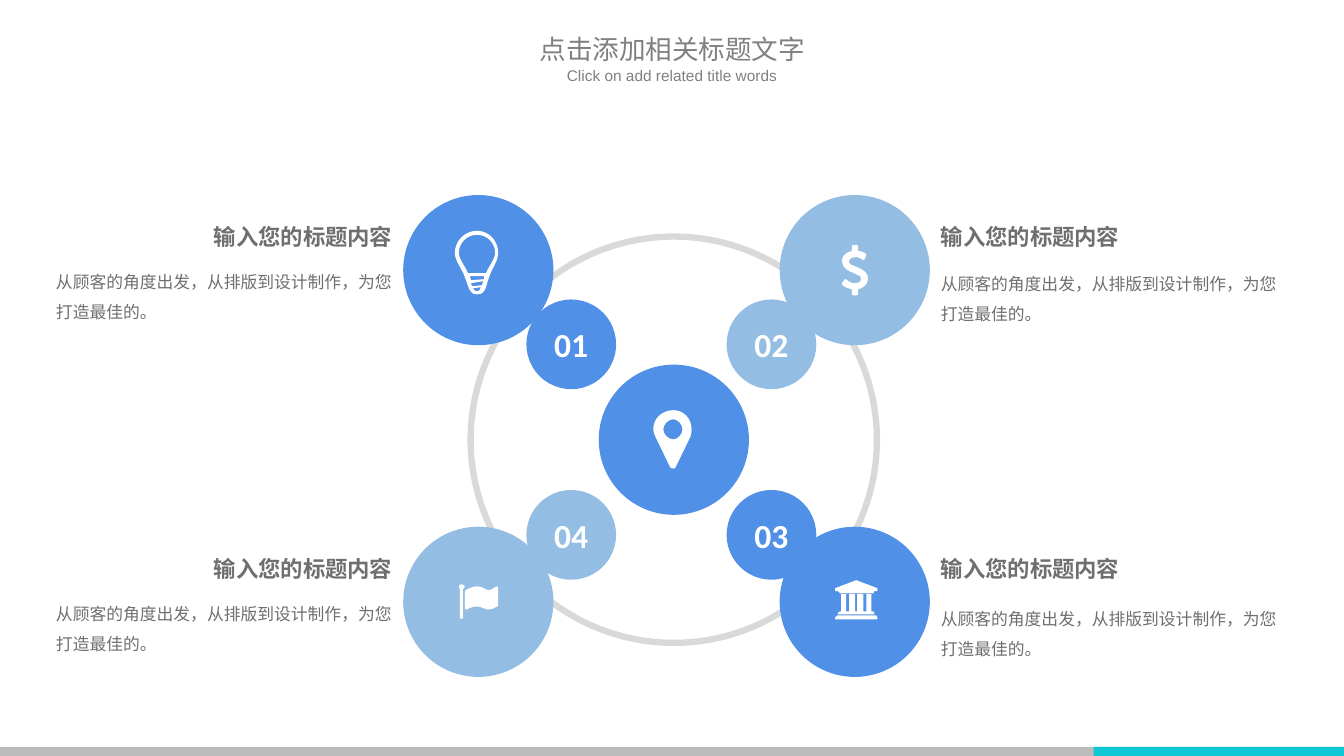
from lxml import etree
from pptx import Presentation
from pptx.dml.color import RGBColor
from pptx.enum.shapes import MSO_SHAPE as SHAPE
from pptx.enum.text import MSO_ANCHOR as ANCHOR, MSO_AUTO_SIZE as AUTO, PP_ALIGN as ALIGN
from pptx.oxml.ns import qn
from pptx.util import Pt

BLUE = RGBColor(0x51, 0x90, 0xE7)
PALE = RGBColor(0x94, 0xBD, 0xE3)
WHITE = RGBColor(0xFF, 0xFF, 0xFF)
RING = RGBColor(0xD9, 0xD9, 0xD9)
TEXT = RGBColor(0x6F, 0x6F, 0x6F)
TITLE = RGBColor(0x80, 0x80, 0x80)
BAR = RGBColor(0xBC, 0xBC, 0xBC)
TEAL = RGBColor(0x0F, 0xC7, 0xD3)
CJK = "Noto Sans CJK SC"
BIG, SMALL = 107.3, 64.1

HEADING = "输入您的标题内容"
BODY = "从顾客的角度出发，从排版到设计制作，为您打造最佳的。"

BULB = [
    [(22, 0), (10, 0, 0, 10, 0, 22), (0, 30, 8, 39, 10, 46), (14, 56, 14, 63, 22, 63),
     (31, 63, 30, 57, 34, 46), (36, 39, 43, 30, 43, 22), (43, 10, 34, 0, 22, 0)],
    [(31, 42), (13, 42), (12, 40, 11, 37, 10, 36), (7, 31, 4, 26, 4, 22),
     (4, 12, 12, 4, 22, 4), (32, 4, 40, 12, 40, 22), (40, 26, 37, 31, 34, 36),
     (33, 37, 32, 40, 31, 42)],
    [(16, 49), (15, 45), (29, 45), (29, 48)],
    [(17, 55), (16, 52), (28, 50), (27, 54)],
    [(22, 60), (20, 60, 19, 59, 18, 57), (26, 56), (25, 59, 24, 60, 22, 60)],
]
DOLLAR = [
    [(16, 44), (16, 49), (15, 50), (11, 50), (10, 49), (10, 44), (3, 43, 0, 39, 0, 39),
     (0, 38), (3, 34), (4, 34), (4, 34, 8, 38, 13, 38), (16, 38, 19, 37, 19, 33),
     (19, 30, 15, 30, 12, 28), (7, 26, 0, 23, 0, 16), (0, 11, 4, 7, 10, 6), (10, 1),
     (11, 0), (15, 0), (16, 1), (16, 6), (21, 6, 24, 9, 24, 9), (24, 11), (22, 15),
     (21, 15), (21, 15, 17, 12, 14, 12), (10, 12, 7, 14, 7, 16), (7, 20, 11, 20, 15, 22),
     (20, 24, 26, 27, 26, 33), (26, 39, 21, 43, 16, 44)],
]
BANK = [
    [(42, 8), (42, 11), (39, 11), (38, 13), (5, 13), (3, 11), (0, 11), (0, 8), (21, 0)],
    [(42, 37), (42, 39), (0, 39), (0, 37), (2, 35), (41, 35)],
    [(11, 14), (11, 31), (14, 31), (14, 14), (20, 14), (20, 31), (22, 31), (22, 14),
     (28, 14), (28, 31), (31, 31), (31, 14), (36, 14), (36, 31), (38, 31), (39, 32),
     (39, 34), (3, 34), (3, 32), (5, 31), (6, 31), (6, 14)],
]
FLAG = [
    [(4, 5), (4, 34), (1, 34), (1, 5), (0, 4, 0, 3, 0, 2), (0, 1, 1, 0, 3, 0),
     (4, 0, 6, 1, 6, 2), (6, 3, 5, 4, 4, 5)],
    [(39, 21), (39, 22, 39, 22, 38, 22), (35, 24, 32, 25, 29, 25), (26, 25, 23, 22, 18, 22),
     (15, 22, 11, 23, 8, 25), (6, 25, 6, 25, 6, 24), (6, 7), (8, 5), (11, 4, 14, 2, 18, 2),
     (21, 2, 24, 3, 27, 5), (28, 5, 29, 6, 29, 6), (33, 6, 36, 2, 38, 2),
     (39, 2, 39, 3, 39, 4)],
]
PIN = [
    [(37, 26), (23, 55), (22, 57, 22, 58, 20, 58), (18, 58, 16, 57, 16, 55), (2, 26),
     (1, 24, 0, 21, 0, 19), (0, 8, 9, 0, 20, 0), (30, 0, 38, 8, 38, 19),
     (38, 21, 38, 24, 37, 26)],
    [(20, 9), (15, 9, 10, 14, 10, 19), (10, 24, 15, 29, 20, 29), (24, 29, 29, 24, 29, 19),
     (29, 14, 24, 9, 20, 9)],
]


def add_icon(s, contours, x, y):
    fb = s.shapes.build_freeform(*contours[0][0], scale=Pt(0.72))
    for i, contour in enumerate(contours):
        if i:
            fb.move_to(*contour[0])
        fb.add_line_segments([seg[-2:] for seg in contour[1:]], close=True)
    sp = fb.convert_to_shape(Pt(x), Pt(y))
    paint(sp, WHITE)
    segs = [seg for contour in contours for seg in contour[1:]]
    for line, seg in zip(list(sp._element.iter(qn("a:lnTo"))), segs):
        if len(seg) == 6:
            line.tag = qn("a:cubicBezTo")
            for i in (0, 1):
                pt = etree.Element(qn("a:pt"), x=str(seg[2 * i]), y=str(seg[2 * i + 1]))
                line.insert(i, pt)


def paint(sp, color):
    sp.shadow.inherit = False
    sp.fill.solid()
    sp.fill.fore_color.rgb = color
    sp.line.fill.background()


def add_block(s, kind, x, y, w, h, color):
    sp = s.shapes.add_shape(kind, Pt(x), Pt(y), Pt(w), Pt(h))
    paint(sp, color)
    return sp


def write(tf, text, size, color, font, align=ALIGN.LEFT, bold=False):
    p = tf.paragraphs[0]
    p.alignment = align
    r = p.add_run()
    r.text = text
    r.font.size, r.font.name, r.font.bold = Pt(size), font, bold
    r.font.color.rgb = color
    etree.SubElement(r.font._element, qn("a:ea"), typeface=CJK)
    return p


def add_text(s, x, y, w, h, wrap=True, inset=0):
    tf = s.shapes.add_textbox(Pt(x), Pt(y), Pt(w), Pt(h)).text_frame
    tf.word_wrap = wrap
    tf.margin_left = tf.margin_right = Pt(inset)
    tf.margin_top = tf.margin_bottom = Pt(inset / 2)
    return tf


def add_title(s, x, y, w, h):
    sp = s.shapes.title
    sp.left, sp.top, sp.width, sp.height = Pt(x), Pt(y), Pt(w), Pt(h)
    tf = sp.text_frame
    tf.auto_size, tf.vertical_anchor = AUTO.NONE, ANCHOR.TOP
    write(tf, "点击添加相关标题文字", 19, TITLE, CJK, ALIGN.CENTER)
    tf = add_text(s, x + 27.5, y + 23.8, w - 55.4, h, inset=7.2)
    write(tf, "Click on add related title words", 11, TITLE, "Arial", ALIGN.CENTER)


def add_footer(s, x, y, w, h):
    add_block(s, SHAPE.RECTANGLE, x, y, w, h, BAR)
    add_block(s, SHAPE.RECTANGLE, x + w - 178.8, y, 178.8, h, TEAL)


def add_hub(s, x, y, size):
    sp = s.shapes.add_shape(SHAPE.OVAL, Pt(x), Pt(y), Pt(size), Pt(size))
    sp.shadow.inherit = False
    sp.fill.background()
    sp.line.color.rgb, sp.line.width = RING, Pt(4.5)
    gap = (size - BIG) / 2
    add_block(s, SHAPE.OVAL, x + gap, y + gap, BIG, BIG, BLUE)
    add_icon(s, PIN, x + 130.4, y + 124)


def add_satellite(s, x, y, num, color, dx, dy, icon, ix, iy):
    sp = add_block(s, SHAPE.OVAL, x + dx, y + dy, SMALL, SMALL, color)
    tf = sp.text_frame
    tf.vertical_anchor, tf.word_wrap = ANCHOR.MIDDLE, False
    write(tf, num, 24, WHITE, "Calibri", ALIGN.CENTER, True)
    add_block(s, SHAPE.OVAL, x, y, BIG, BIG, color)
    add_icon(s, icon, x + ix, y + iy)


def add_caption(s, x, y, w, align, gap):
    hx = x + w - 130 if align == ALIGN.RIGHT else x
    tf = add_text(s, hx, y, 130, 19.4, wrap=False)
    tf.vertical_anchor = ANCHOR.MIDDLE
    write(tf, HEADING, 16, TEXT, "Calibri", align, True)
    tf = add_text(s, x, y + gap, w, 44)
    write(tf, BODY, 12, TEXT, CJK).line_spacing = 1.5


def main():
    prs = Presentation()
    prs.slide_width, prs.slide_height = Pt(960), Pt(540)
    s = prs.slides.add_slide(prs.slide_layouts[5])
    add_footer(s, 0, 533.5, 960, 6.5)
    add_title(s, 365.8, 20.2, 229, 28)
    add_hub(s, 336.2, 169, 290.2)
    left, right, top, bottom = 288, 556.9, 139.3, 376.2
    add_satellite(s, left, top, "01", BLUE, 88, 74.6, BULB, 36.9, 25.6)
    add_satellite(s, right, top, "02", PALE, -37.9, 74.6, DOLLAR, 44.5, 35.7)
    add_satellite(s, right, bottom, "03", BLUE, -37.9, -26.2, BANK, 39.6, 38.2)
    add_satellite(s, left, bottom, "04", PALE, 88, -26.2, FLAG, 39.7, 41.2)
    for y, right_gap in ((159, 29), (396.3, 31.4)):
        add_caption(s, 40, y, 240.4, ALIGN.RIGHT, 27.9)
        add_caption(s, 672, y, 240.4, ALIGN.LEFT, right_gap)
    prs.save("out.pptx")


if __name__ == "__main__":
    main()
